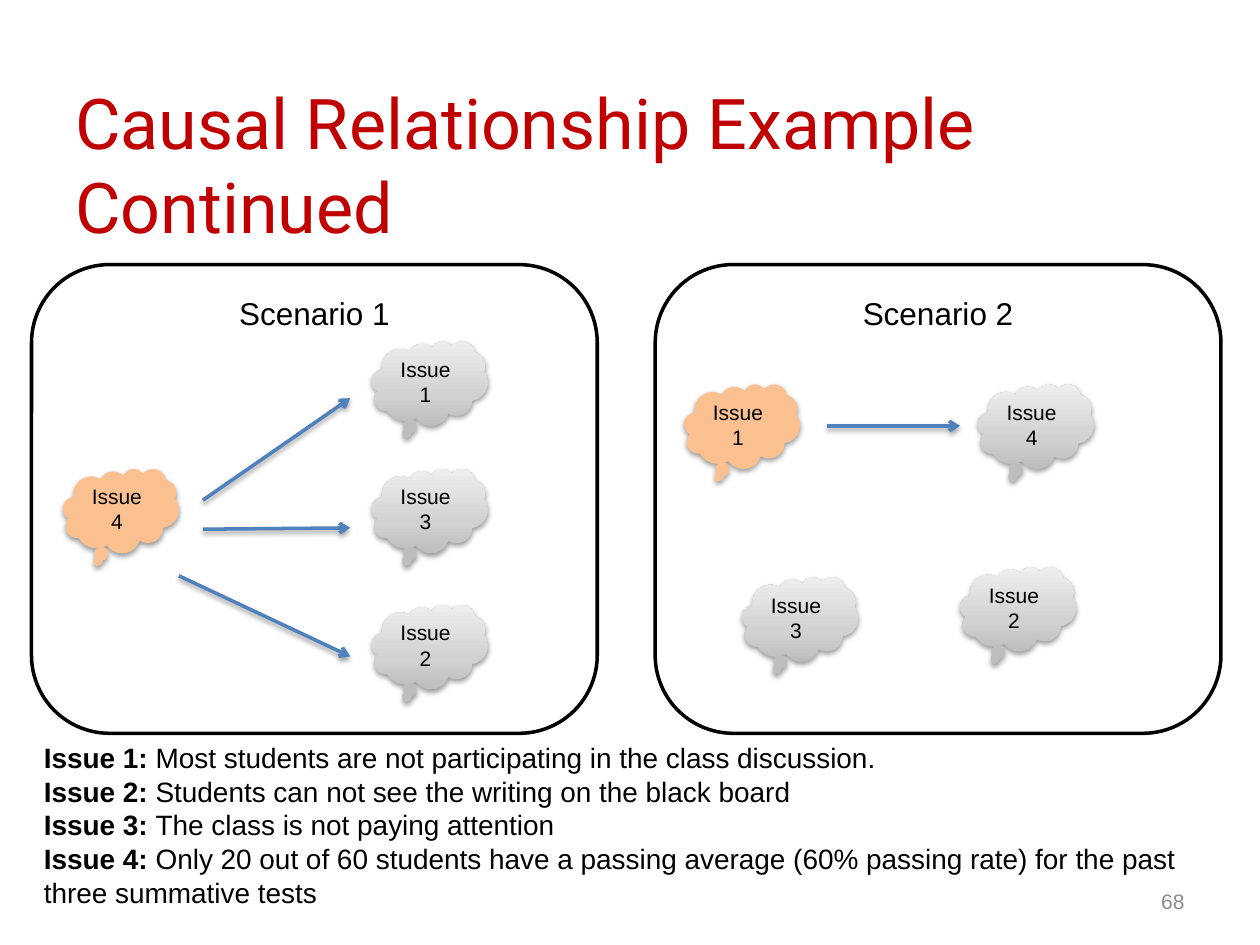
"""Build the causal relationship slide with two issue scenarios."""
from dataclasses import dataclass

from lxml import etree
from pptx import Presentation
from pptx import util as u
from pptx.dml.color import RGBColor
from pptx.enum import shapes, text
from pptx.oxml import parse_xml
from pptx.oxml.ns import nsdecls, qn


@dataclass(frozen=True)
class Theme:
    title_font: str = "Roboto"
    body_font: str = "Arial"
    title: str = "C00000"
    ink: str = "000000"
    paper: str = "FFFFFF"
    muted: str = "8C8C8C"
    arrow: str = "4F81BD"
    cause: str = "FAC090"
    effect: tuple = ((0, "BDBDBD"), (35, "D1D1D1"), (100, "EEEEEE"))
    title_size: int = 40
    panel_size: int = 18
    body_size: int = 16
    small_size: int = 12
    line: int = 2


T = Theme()
TITLE = "Causal Relationship Example Continued"
PAGE = "68"
ISSUES = [
    ("Issue 1: ", "Most students are not participating in the class discussion."),
    ("Issue 2: ", "Students can not see the writing on the black board"),
    ("Issue 3: ", "The class is not paying attention"),
    ("Issue 4: ", "Only 20 out of 60 students have a passing average (60% passing rate) "
                  "for the past three summative tests"),
]
SCENARIOS = [
    {
        "name": "Scenario 1", "left": 0.25, "cause": ("Issue 4", 0.5, 3.72),
        "effects": [("Issue 1", 2.95, 2.71), ("Issue 2", 2.95, 4.8), ("Issue 3", 2.95, 3.72)],
        "arrows": [(1.61, 3.97, 2.78, 3.16), (1.61, 4.2, 2.78, 4.19), (1.42, 4.57, 2.78, 5.21)],
    },
    {
        "name": "Scenario 2", "left": 5.2, "cause": ("Issue 1", 5.43, 3.05),
        "effects": [("Issue 4", 7.76, 3.05), ("Issue 2", 7.62, 4.5), ("Issue 3", 5.89, 4.58)],
        "arrows": [(6.56, 3.38, 7.62, 3.38)],
    },
]
PANEL_TOP, PANEL_W, PANEL_H = 2.1, 4.49, 3.72
CLOUD_W, CLOUD_H = 0.92, 0.67


def inches(*values):
    return [u.Inches(v) for v in values]


def style_runs(p, size, color, font=T.body_font):
    for r in p.runs:
        r.font.size = u.Pt(size)
        r.font.name = font
        r.font.color.rgb = RGBColor.from_string(color)


def write(sp, content, size, color, align, anchor, font=T.body_font):
    tf = sp.text_frame
    tf.word_wrap = True
    tf.vertical_anchor = anchor
    tf.text = content
    p = tf.paragraphs[0]
    p.alignment = align
    style_runs(p, size, color, font)


def add_shadow(sp):
    sp._element.spPr.append(parse_xml(
        f'<a:effectLst {nsdecls("a")}><a:outerShdw blurRad="{u.Pt(3.1)}" dist="{u.Pt(1.6)}" '
        'dir="5400000" rotWithShape="0"><a:srgbClr val="000000"><a:alpha val="38000"/>'
        '</a:srgbClr></a:outerShdw></a:effectLst>'))


def fill_gradient(sp, stops):
    sp.fill.gradient()
    sp.fill.gradient_angle = 90
    gs_list = sp._element.spPr.find(".//" + qn("a:gsLst"))
    for gs in list(gs_list):
        gs_list.remove(gs)
    for pos, color in stops:
        gs = etree.SubElement(gs_list, qn("a:gs"), pos=str(pos * 1000))
        etree.SubElement(gs, qn("a:srgbClr"), val=color)


def add_panel(s, name, left):
    sp = s.shapes.add_shape(shapes.MSO_SHAPE.ROUNDED_RECTANGLE,
                            *inches(left, PANEL_TOP, PANEL_W, PANEL_H))
    sp.shadow.inherit = False
    sp.fill.solid()
    sp.fill.fore_color.rgb = RGBColor.from_string(T.paper)
    sp.line.color.rgb = RGBColor.from_string(T.ink)
    sp.line.width = u.Pt(T.line)
    write(sp, name, T.panel_size, T.ink, text.PP_ALIGN.CENTER, text.MSO_ANCHOR.TOP)


def add_cloud(s, label, left, top, is_cause=False):
    sp = s.shapes.add_shape(shapes.MSO_SHAPE.CLOUD_CALLOUT,
                            *inches(left, top, CLOUD_W, CLOUD_H))
    if is_cause:
        sp.fill.solid()
        sp.fill.fore_color.rgb = RGBColor.from_string(T.cause)
    else:
        fill_gradient(sp, T.effect)
    sp.line.fill.background()
    add_shadow(sp)
    write(sp, label, T.small_size, T.ink, text.PP_ALIGN.CENTER, text.MSO_ANCHOR.MIDDLE)


def add_arrow(s, ends):
    sp = s.shapes.add_connector(shapes.MSO_CONNECTOR.STRAIGHT, *inches(*ends))
    sp.line.color.rgb = RGBColor.from_string(T.arrow)
    sp.line.width = u.Pt(T.line)
    etree.SubElement(sp.line._get_or_add_ln(), qn("a:tailEnd"), type="arrow")
    add_shadow(sp)


def add_issues(s):
    tf = s.shapes.add_textbox(*inches(0.25, 5.83, 9.44, 1.45)).text_frame
    tf.word_wrap = True
    for i, parts in enumerate(ISSUES):
        p = tf.add_paragraph() if i else tf.paragraphs[0]
        for part, bold in zip(parts, (True, False)):
            r = p.add_run()
            r.text = part
            r.font.bold = bold
        style_runs(p, T.body_size, T.ink)


def main():
    prs = Presentation()
    prs.slide_width, prs.slide_height = inches(10, 7.5)
    s = prs.slides.add_slide(prs.slide_layouts[6])
    write(s.shapes.add_textbox(*inches(0.5, 0.67, 7.58, 1.25)), TITLE, T.title_size,
          T.title, text.PP_ALIGN.LEFT, text.MSO_ANCHOR.MIDDLE, T.title_font)
    for scenario in SCENARIOS:
        add_panel(s, scenario["name"], scenario["left"])
        for effect in scenario["effects"]:
            add_cloud(s, *effect)
        add_cloud(s, *scenario["cause"], is_cause=True)
        for ends in scenario["arrows"]:
            add_arrow(s, ends)
    add_issues(s)
    write(s.shapes.add_textbox(*inches(7.17, 6.95, 2.33, 0.4)), PAGE, T.small_size,
          T.muted, text.PP_ALIGN.RIGHT, text.MSO_ANCHOR.MIDDLE)
    prs.save("out.pptx")


if __name__ == "__main__":
    main()
